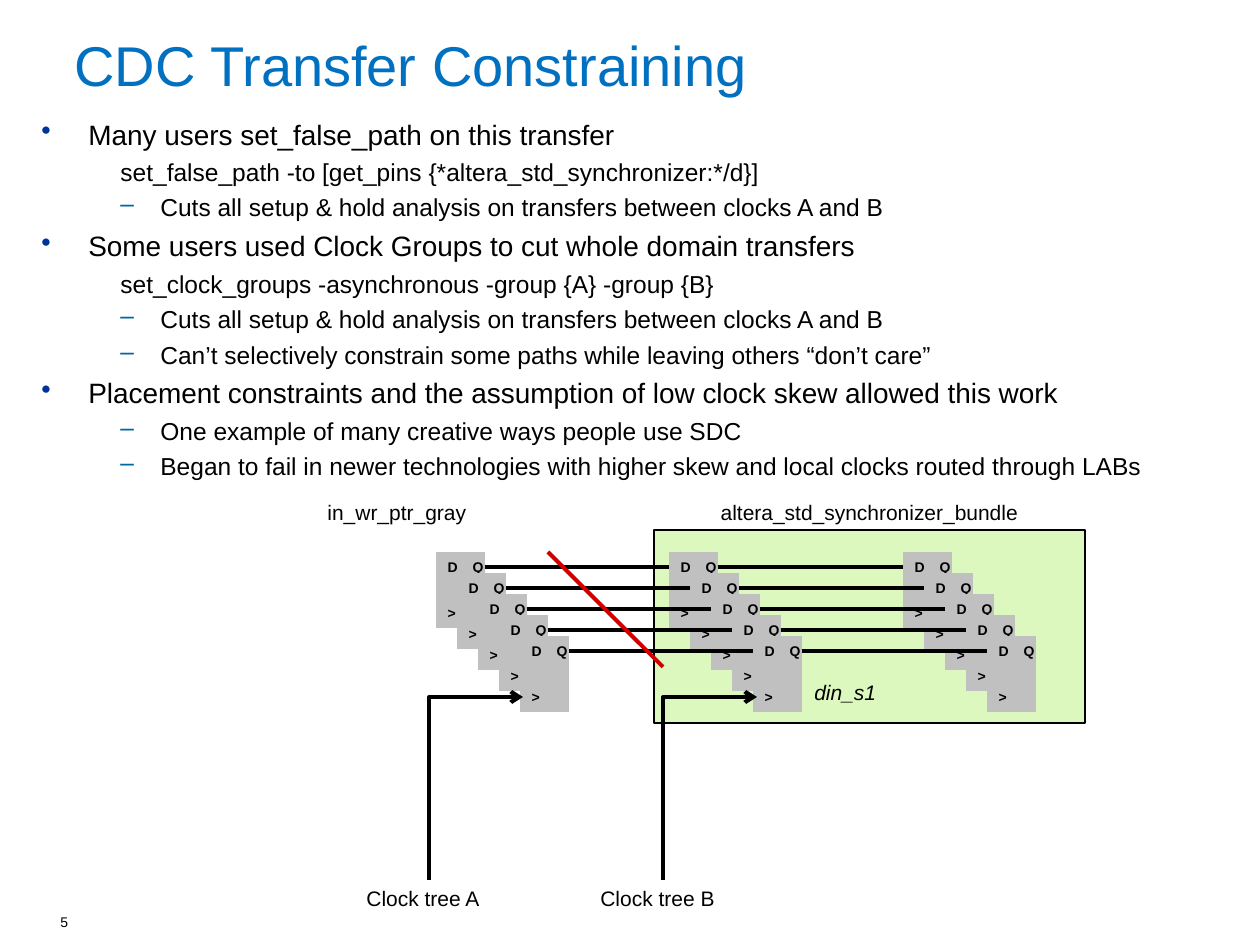
from pptx import Presentation
from pptx.dml.color import RGBColor
from pptx.enum.shapes import MSO_CONNECTOR as LINE, MSO_SHAPE as SHAPE
from pptx.enum.text import MSO_ANCHOR as ANCHOR, PP_ALIGN as ALIGN
from pptx.oxml.ns import qn
from pptx.util import Emu, Pt
from lxml.etree import SubElement

PX_PER_INCH = 126
BLACK, WHITE, GRAY, RED = "000000", "FFFFFF", "C0C0C0", "CC0000"
GREEN, BLUE = "DCF8BF", "0070C0"

LEVELS = {
    "point": dict(size=16, margin=47, indent=-47, bullet="•", bullet_color="003399", before=4),
    "code": dict(size=14, margin=79, indent=0, before=3.5),
    "detail": dict(size=14, margin=119, indent=-40, bullet="–", bullet_color="0067A6", before=3.5),
}
BODY = [
    ("point", "Many users set_false_path on this transfer"),
    ("code", "set_false_path -to [get_pins {*altera_std_synchronizer:*/d}]"),
    ("detail", "Cuts all setup & hold analysis on transfers between clocks A and B"),
    ("point", "Some users used Clock Groups to cut whole domain transfers"),
    ("code", "set_clock_groups -asynchronous -group {A} -group {B}"),
    ("detail", "Cuts all setup & hold analysis on transfers between clocks A and B"),
    ("detail", "Can’t selectively constrain some paths while leaving others “don’t care”"),
    ("point", "Placement constraints and the assumption of low clock skew allowed this work"),
    ("detail", "One example of many creative ways people use SDC"),
    ("detail", "Began to fail in newer technologies with higher skew and local clocks routed through LABs"),
]
LABELS = [
    ("CDC Transfer Constraining", (62, 11, 1157, 107), dict(size=32, color=BLUE, anchor=ANCHOR.MIDDLE)),
    ("5", (48, 907, 96, 39), dict(size=8)),
    ("in_wr_ptr_gray", (315, 493, 219, 38), {}),
    ("altera_std_synchronizer_bundle", (654, 493, 431, 38), dict(align=ALIGN.CENTER)),
    ("din_s1", (802, 673, 87, 38), dict(italic=True, wrap=False)),
    ("Clock tree A", (354, 879, 147, 38), {}),
    ("Clock tree B", (588, 879, 147, 38), {}),
]
BUNDLE = (654, 530, 431, 193)
REGISTER_LEFTS = (436, 669, 903)
REGISTER_TOP, BITS, STEP = 552, 5, 21
FLOP_SIZE, PIN_SIZE = (49, 76), (24, 30)
PINS = [("D", 0, 0), ("Q", 25, 0), (">", 0, 46)]
CLOCK_LEFTS = (429, 663)
CLOCK_TOP, CLOCK_BOTTOM, CLOCK_RUN = 697, 880, 94
CUT = (548, 552, 663, 667)


def px(*values):
    return [Emu(round(value * 914400 / PX_PER_INCH)) for value in values]


def color_of(code):
    return RGBColor.from_string(code)


def write(para, text, size=12, color=BLACK, bold=False, italic=False, align=ALIGN.LEFT,
          margin=0, indent=0, bullet=None, bullet_color=None, before=0):
    para.alignment = align
    para.space_before = Pt(before)
    props = para._p.get_or_add_pPr()
    props.set("marL", str(px(margin)[0]))
    props.set("indent", str(px(indent)[0]))
    if bullet:
        SubElement(SubElement(props, qn("a:buClr")), qn("a:srgbClr")).set("val", bullet_color)
        SubElement(props, qn("a:buChar")).set("char", bullet)
    span = para.add_run()
    span.text = text
    font = span.font
    font.name, font.size, font.bold, font.italic = "Arial", Pt(size), bold, italic
    font.color.rgb = color_of(color)


def add_box(shapes, place, anchor=ANCHOR.TOP, wrap=True):
    box = shapes.add_textbox(*px(*place))
    box.text_frame.word_wrap = wrap
    box.text_frame.vertical_anchor = anchor
    return box


def add_label(shapes, text, place, anchor=ANCHOR.TOP, wrap=True, **style):
    box = add_box(shapes, place, anchor, wrap)
    write(box.text_frame.paragraphs[0], text, **style)
    return box


def add_block(shapes, kind, place, fill, line=None):
    block = shapes.add_shape(kind, *px(*place))
    block.shadow.inherit = False
    block.fill.solid()
    block.fill.fore_color.rgb = color_of(fill)
    if line:
        block.line.color.rgb = color_of(line)
        block.line.width = Pt(0.75)
    else:
        block.line.fill.background()


def add_wire(page, kind, ends, color=BLACK):
    wire = page.shapes.add_connector(kind, *px(*ends))
    wire.line.color.rgb = color_of(color)
    wire.line.width = Pt(2.25)
    SubElement(wire._element.spPr, qn("a:effectLst"))
    return wire


def add_flop(page, left, top):
    group = page.shapes.add_group_shape()
    add_block(group.shapes, SHAPE.FLOWCHART_PROCESS, (left, top, *FLOP_SIZE), GRAY)
    return {
        name: add_label(group.shapes, name, (left + dx, top + dy, *PIN_SIZE),
                        size=8, bold=True, align=ALIGN.CENTER)
        for name, dx, dy in PINS
    }


def add_clock(page, left):
    rise = CLOCK_BOTTOM - CLOCK_TOP
    middle_x, middle_y = left + CLOCK_RUN / 2, CLOCK_TOP + rise / 2
    ends = (middle_x + rise / 2, middle_y + CLOCK_RUN / 2,
            middle_x - rise / 2, middle_y - CLOCK_RUN / 2)
    clock = add_wire(page, LINE.ELBOW, ends)
    props = clock._element.spPr
    props.find(qn("a:xfrm")).set("rot", "5400000")
    props.find(qn("a:prstGeom")).set("prst", "bentConnector2")
    SubElement(props.find(qn("a:ln")), qn("a:tailEnd")).set("type", "arrow")


def main():
    deck = Presentation()
    deck.slide_width, deck.slide_height = px(1260, 945)
    page = deck.slides.add_slide(deck.slide_layouts[6])
    page.background.fill.solid()
    page.background.fill.fore_color.rgb = color_of(WHITE)

    add_block(page.shapes, SHAPE.RECTANGLE, BUNDLE, GREEN, BLACK)
    frame = add_box(page.shapes, (29, 111, 1196, 362)).text_frame
    for index, (level, text) in enumerate(BODY):
        para = frame.add_paragraph() if index else frame.paragraphs[0]
        style = LEVELS[level] if index else {**LEVELS[level], "before": 0}
        write(para, text, **style)

    registers = [
        [add_flop(page, left + bit * STEP, REGISTER_TOP + bit * STEP) for bit in range(BITS)]
        for left in REGISTER_LEFTS
    ]
    for sources, targets in zip(registers, registers[1:]):
        for source, target in zip(sources, targets):
            wire = add_wire(page, LINE.STRAIGHT, (0, 0, 0, 0))
            wire.begin_connect(source["Q"], 3)
            wire.end_connect(target["D"], 1)
    add_wire(page, LINE.STRAIGHT, CUT, RED)
    for left in CLOCK_LEFTS:
        add_clock(page, left)
    for text, place, style in LABELS:
        add_label(page.shapes, text, place, **style)

    deck.save("out.pptx")


if __name__ == "__main__":
    main()
